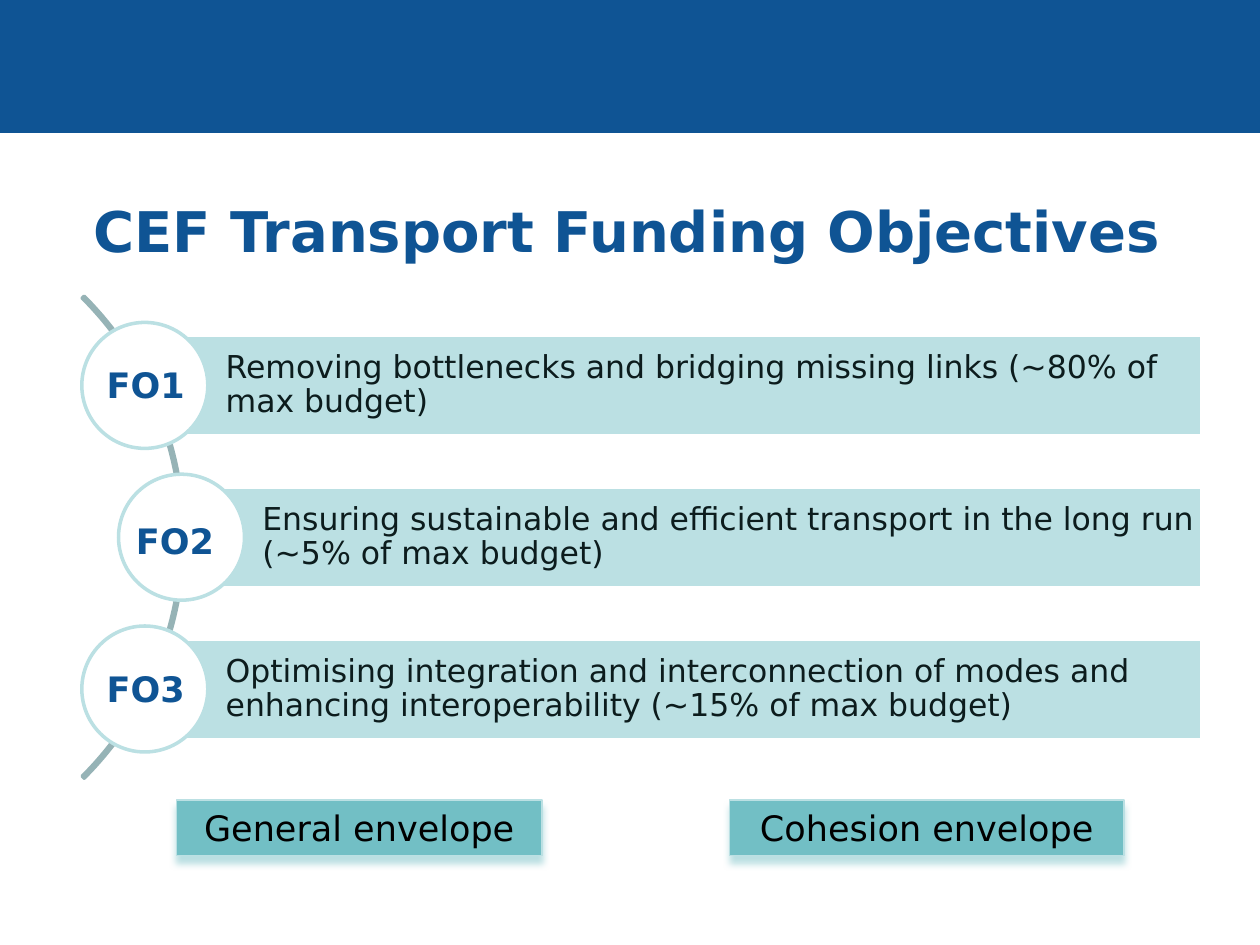
from lxml import etree
from pptx import Presentation
from pptx import util as u
from pptx.dml.color import RGBColor
from pptx.enum import shapes, text
from pptx.oxml.ns import qn

Cm = u.Cm
KIND = shapes.MSO_SHAPE
CENTER, LEFT = text.PP_ALIGN.CENTER, text.PP_ALIGN.LEFT
TOP, MIDDLE = text.MSO_ANCHOR.TOP, text.MSO_ANCHOR.MIDDLE


def paint(target, fill=None, line=None, width=0.75):
    target.shadow.inherit = False
    if fill:
        target.fill.solid()
        target.fill.fore_color.rgb = RGBColor.from_string(fill)
    else:
        target.fill.background()
    target.line.color.rgb = RGBColor.from_string(line)
    target.line.width = u.Pt(width)


def write(target, words, size, color, bold=False, align=CENTER, **frame_format):
    frame = target.text_frame
    frame.text = words
    for name, value in {"word_wrap": True, "vertical_anchor": TOP, **frame_format}.items():
        setattr(frame, name, value)
    paragraph = frame.paragraphs[0]
    paragraph.alignment = align
    for name, value in {"name": "DejaVu Sans", "size": u.Pt(size), "bold": bold}.items():
        setattr(paragraph.runs[0].font, name, value)
    paragraph.runs[0].font.color.rgb = RGBColor.from_string(color)
    return paragraph


deck = Presentation()
deck.slide_width, deck.slide_height = Cm(25.4), Cm(19.05)
slide = deck.slides.add_slide(deck.slide_layouts[6])
canvas = slide.shapes

banner = canvas.add_shape(KIND.RECTANGLE, 0, 0, Cm(25.4), Cm(2.67))
paint(banner, "0F5494", "0F5494")

heading = canvas.add_textbox(Cm(1.09), Cm(3.53), Cm(22.86), Cm(2.21))
write(heading, "CEF Transport Funding Objectives", 32, "0F5494", True,
      vertical_anchor=MIDDLE, margin_left=Cm(0.5))

curve = canvas.add_shape(KIND.BLOCK_ARC, Cm(-10.03), Cm(3.96), Cm(13.74), Cm(13.74))
for index, value in enumerate((189, 27, 0.004)):
    curve.adjustments[index] = value
paint(curve, line="96B3B6", width=2)

objectives = [
    ("FO1", 2.92, 1.9, 7.21,
     "Removing bottlenecks and bridging missing links (~80% of max budget)"),
    ("FO2", 3.66, 2.49, 10.34,
     "Ensuring sustainable and efficient transport in the long run (~5% of max budget)"),
    ("FO3", 2.92, 1.9, 13.34,
     "Optimising integration and interconnection of modes and enhancing "
     "interoperability (~15% of max budget)"),
]
bar_right, first_top, pitch, diameter = 24.23, 6.76, 3.06, 2.54

for row, (code, bar_left, code_left, code_top, objective) in enumerate(objectives):
    bar_top = first_top + row * pitch
    bar = canvas.add_shape(KIND.RECTANGLE, Cm(bar_left), Cm(bar_top),
                           Cm(bar_right - bar_left), Cm(2.03))
    paint(bar, "BBE0E3", "FFFFFF", 2)
    paragraph = write(bar, objective, 18, "0C1C1D", align=LEFT, vertical_anchor=MIDDLE,
                      margin_left=Cm(1.63), margin_right=Cm(0.13),
                      margin_top=Cm(0.13), margin_bottom=Cm(0.13))
    paragraph.line_spacing = 0.9

    circle = canvas.add_shape(KIND.OVAL, Cm(bar_left - diameter / 2), Cm(bar_top - 0.26),
                              Cm(diameter), Cm(diameter))
    paint(circle, "FFFFFF", "BBE0E3", 2)

    code_label = canvas.add_textbox(Cm(code_left), Cm(code_top), Cm(2.08), Cm(1.12))
    write(code_label, code, 20, "0F5494", True, word_wrap=False,
          auto_size=text.MSO_AUTO_SIZE.SHAPE_TO_FIT_TEXT)

for words, left, width in (("General envelope", 3.56, 7.37), ("Cohesion envelope", 14.71, 7.95)):
    envelope = canvas.add_shape(KIND.RECTANGLE, Cm(left), Cm(16.13), Cm(width), Cm(1.12))
    paint(envelope, "72BFC5", "BBE0E3")
    write(envelope, words, 20, "000000", auto_size=text.MSO_AUTO_SIZE.SHAPE_TO_FIT_TEXT)
    effects = envelope._element.spPr.find(qn("a:effectLst"))
    shadow = etree.SubElement(effects, qn("a:outerShdw"), blurRad=str(u.Pt(4)),
                              dist=str(u.Pt(4)), dir="5400000", rotWithShape="0")
    etree.SubElement(shadow, qn("a:srgbClr"), val="BBE0E3")

deck.save("out.pptx")
